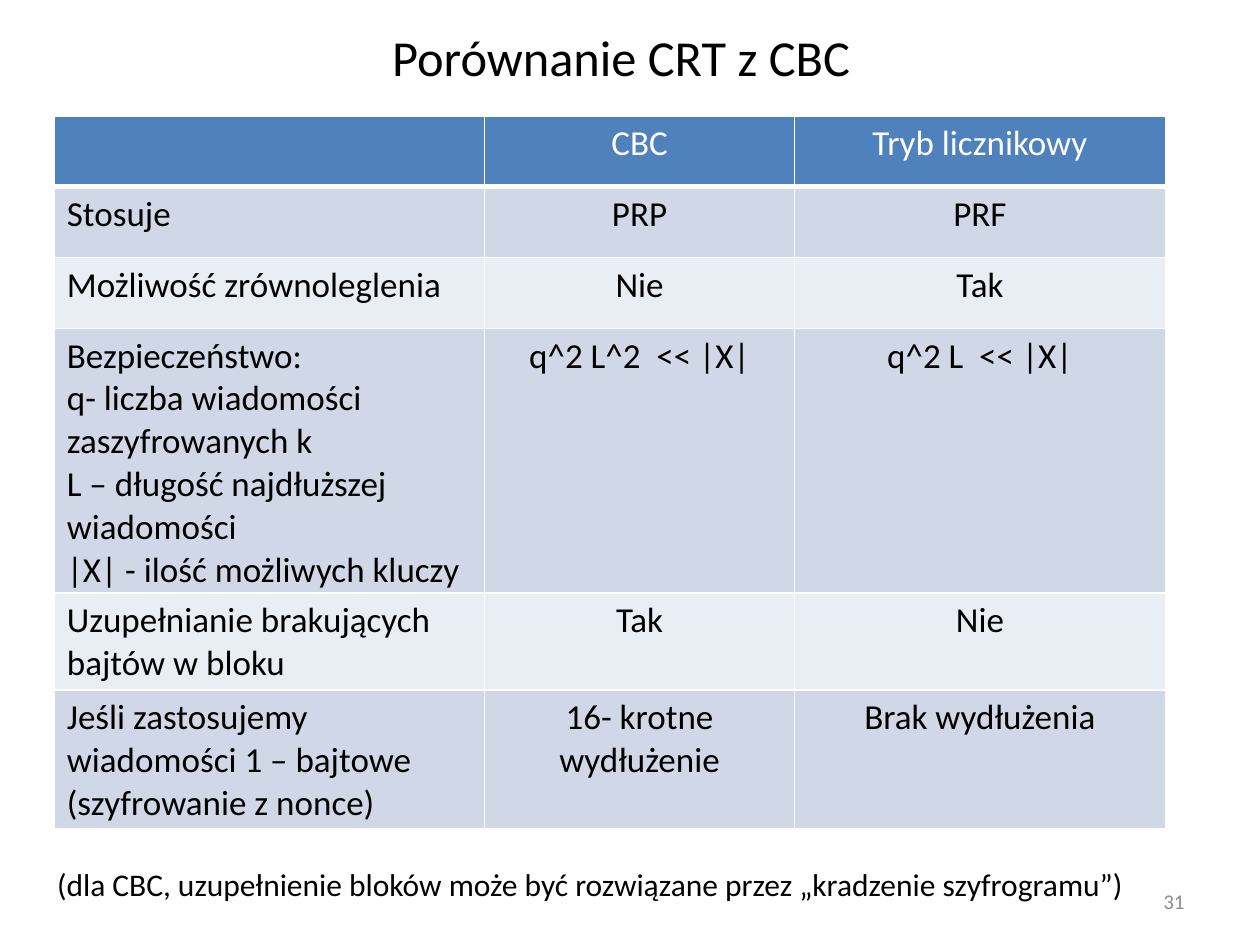
from lxml import etree
from pptx import Presentation
from pptx.dml.color import RGBColor
from pptx.enum import text as t
from pptx.oxml import ns
from pptx.util import Pt

LEFT, MID, RIGHT = t.PP_ALIGN.LEFT, t.PP_ALIGN.CENTER, t.PP_ALIGN.RIGHT
BLACK, WHITE, GREY = "000000", "FFFFFF", "8C8C8C"
HEAD, BANDS = "4F81BD", ("D0D8E8", "E9EDF4")


def rgb(code):
    return RGBColor.from_string(code)


def write(frame, paras, size, color, align):
    """Fill a frame; a newline inside a paragraph is a line break."""
    frame.word_wrap = True
    for i, words in enumerate(paras):
        para = frame.add_paragraph() if i else frame.paragraphs[0]
        para.alignment = align
        for j, line in enumerate(words.split("\n")):
            if j:
                para.add_line_break()
            run = para.add_run()
            run.text = line
            run.font.name = "Calibri"
            run.font.size = Pt(size)
            run.font.bold = False
            run.font.color.rgb = rgb(color)


deck = Presentation()
deck.slide_width, deck.slide_height = Pt(720), Pt(540)
slide = deck.slides.add_slide(deck.slide_layouts[6])

# Title, slide number and footnote
note = "(dla CBC, uzupełnienie bloków może być rozwiązane przez „kradzenie szyfrogramu”)"
middle, top = t.MSO_ANCHOR.MIDDLE, t.MSO_ANCHOR.TOP
for box, words, size, color, align, anchor in [
    ((31, 10, 648, 44), "Porównanie CRT z CBC", 28.8, BLACK, MID, middle),
    ((516, 500.5, 168, 28.75), "31", 12, GREY, RIGHT, middle),
    ((25.5, 491, 635, 29), note, 18, BLACK, LEFT, top),
]:
    frame = slide.shapes.add_textbox(*map(Pt, box)).text_frame
    frame.vertical_anchor = anchor
    write(frame, [words], size, color, align)

# Comparison table: each cell is a list of paragraphs
rows = [
    [[], ["CBC"], ["Tryb licznikowy"]],
    [["Stosuje"], ["PRP"], ["PRF"]],
    [["Możliwość zrównoleglenia"], ["Nie"], ["Tak"]],
    [["Bezpieczeństwo:\nq- liczba wiadomości zaszyfrowanych k",
      "L – długość najdłuższej wiadomości",
      "|X| - ilość możliwych kluczy"],
     ["q^2 L^2  << |X|"], ["q^2 L  << |X|"]],
    [["Uzupełnianie brakujących bajtów w bloku"], ["Tak"], ["Nie"]],
    [["Jeśli zastosujemy wiadomości 1 – bajtowe (szyfrowanie z nonce)"],
     ["16- krotne wydłużenie"], ["Brak wydłużenia"]],
]
widths, high = (246, 177, 212), 40.5
table = slide.shapes.add_table(
    len(rows), len(widths), Pt(31), Pt(66.25), Pt(sum(widths)), Pt(high * len(rows))
).table
table.first_row = table.horz_banding = False
for col, wide in zip(table.columns, widths):
    col.width = Pt(wide)

for r, row in enumerate(rows):
    table.rows[r].height = Pt(high)
    for c, paras in enumerate(row):
        cell = table.cell(r, c)
        cell.fill.solid()
        cell.fill.fore_color.rgb = rgb(BANDS[(r - 1) % 2] if r else HEAD)
        write(cell.text_frame, paras, 20, BLACK if r else WHITE, MID if c else LEFT)

        # White cell borders, heavier under the header
        props = cell._tc.get_or_add_tcPr()
        for i, side in enumerate("LRTB"):
            thick = 3 if (r, side) in ((0, "B"), (1, "T")) else 1
            line = etree.Element(ns.qn("a:ln" + side), w=str(Pt(thick)))
            fill = etree.SubElement(line, ns.qn("a:solidFill"))
            etree.SubElement(fill, ns.qn("a:srgbClr"), val=WHITE)
            props.insert(i, line)

deck.save("out.pptx")
